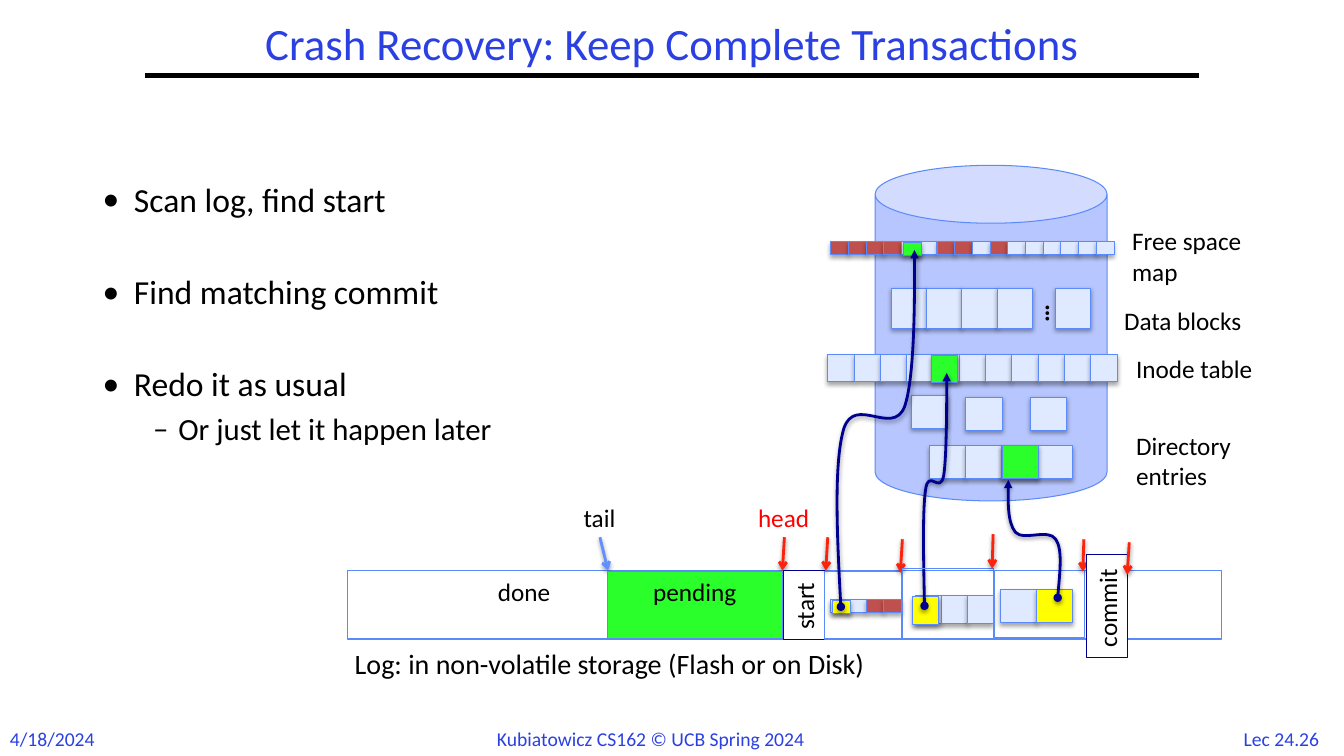
from dataclasses import dataclass
from typing import Any

import pptx
import pptx.dml.color
import pptx.enum.shapes
import pptx.enum.text
import pptx.oxml
import pptx.oxml.ns
import pptx.util
from lxml import etree

RGB = pptx.dml.color.RGBColor
SHAPES = pptx.enum.shapes.MSO_SHAPE
ALIGN = pptx.enum.text.PP_ALIGN
Pt = pptx.util.Pt
qn = pptx.oxml.ns.qn

SCALE = 9144  # EMU in one px, 100 px to the inch
BLACK = RGB(0x00, 0x00, 0x00)
WHITE = RGB(0xFF, 0xFF, 0xFF)
HEADING = RGB(0x2A, 0x40, 0xE2)
RED = RGB(0xFF, 0x00, 0x00)
ARROW_RED = RGB(0xFC, 0x23, 0x0C)
ARROW_BLUE = RGB(0x61, 0x8F, 0xFD)
NAVY = RGB(0x00, 0x00, 0x90)
OUTLINE = RGB(0x5B, 0x8A, 0xFB)
DISK = RGB(0xB7, 0xC6, 0xFE)
FREE = RGB(0xDF, 0xE9, 0xFF)
USED = RGB(0xC0, 0x50, 0x4D)
GREEN = RGB(0x2B, 0xFF, 0x2B)
YELLOW = RGB(0xFF, 0xFF, 0x00)


def px(*lengths):
    return [pptx.util.Emu(round(length * SCALE)) for length in lengths]


def add_shadow(shape, alpha, distance):
    properties = shape._element.spPr
    effects = properties.find(qn("a:effectLst"))
    if effects is None:
        effects = etree.SubElement(properties, qn("a:effectLst"))
    shadow = etree.SubElement(effects, qn("a:outerShdw"), blurRad="40000", dist=str(distance),
                              dir="5400000", rotWithShape="0")
    colour = etree.SubElement(shadow, qn("a:srgbClr"), val="000000")
    etree.SubElement(colour, qn("a:alpha"), val=str(alpha * 1000))


def style_line(shape, colour, width, **ends):
    shape.line.color.rgb = colour
    shape.line.width = Pt(width)
    for end in ("headEnd", "tailEnd"):
        if end in ends:
            etree.SubElement(shape.line._get_or_add_ln(), qn(f"a:{end}"), type=ends[end])


def add_span(para, words, size, colour, bold=False):
    span = para.add_run()
    span.text = words
    span.font.name = "Calibri"
    span.font.size = Pt(size)
    span.font.color.rgb = colour
    span.font.bold = bold


@dataclass
class Region:
    """Draws parts at px offsets from its top left corner."""
    page: Any
    left: int
    top: int
    width: int
    height: int

    def place(self, x, y, width, height):
        return px(self.left + x, self.top + y, width, height)

    def shape(self, kind, box, fill=None):
        shape = self.page.shapes.add_shape(kind, *self.place(*box))
        shape.shadow.inherit = False
        if fill is None:
            shape.fill.background()
        else:
            shape.fill.solid()
            shape.fill.fore_color.rgb = fill
        style_line(shape, OUTLINE, 0.75)
        return shape

    def row(self, x, y, width, height, colours):
        step = width / len(colours)
        for index, colour in enumerate(colours):
            cell = self.shape(SHAPES.RECTANGLE, (x + index * step, y, step, height), colour)
            add_shadow(cell, 35, 23000)

    def label(self, box, *lines, size=18, colour=BLACK, bold=False, wrap=False, align=ALIGN.LEFT):
        label = self.page.shapes.add_textbox(*self.place(*box))
        frame = label.text_frame
        frame.word_wrap = wrap
        frame.auto_size = pptx.enum.text.MSO_AUTO_SIZE.SHAPE_TO_FIT_TEXT
        for index, words in enumerate(lines):
            para = frame.add_paragraph() if index else frame.paragraphs[0]
            para.alignment = align
            add_span(para, words, size, colour, bold)
        return label

    def marker(self, box, words):
        marker = self.label(box, words)
        marker.rotation = 270
        marker.fill.solid()
        marker.fill.fore_color.rgb = WHITE
        style_line(marker, NAVY, 0.75)

    def arrow(self, x1, y1, x2, y2, colour=ARROW_RED):
        arrow = self.page.shapes.add_connector(
            pptx.enum.shapes.MSO_CONNECTOR.STRAIGHT, *self.place(x1, y1, 0, 0)[:2],
            *self.place(x2, y2, 0, 0)[:2])
        style_line(arrow, colour, 2, tailEnd="arrow")
        add_shadow(arrow, 38, 20000)

    def curve(self, start, *points):
        """Start point, then two control points and an end for each Bézier piece."""
        spots = [(self.left + x, self.top + y) for x, y in (start, *points)]
        builder = self.page.shapes.build_freeform(*spots[0], scale=SCALE)
        builder.add_line_segments(spots[1:], close=False)
        curve = builder.convert_to_shape()
        steps = list(curve._element.iter(qn("a:lnTo")))
        for first in range(0, len(steps), 3):
            bend = etree.Element(qn("a:cubicBezTo"))
            steps[first].addprevious(bend)
            for step in steps[first:first + 3]:
                bend.append(step[0])
                step.getparent().remove(step)
        curve.shadow.inherit = False
        curve.fill.background()
        style_line(curve, NAVY, 2, headEnd="oval", tailEnd="triangle")
        add_shadow(curve, 38, 20000)


def draw_heading(page, box):
    area = Region(page, *box)
    title = page.shapes.add_textbox(*area.place(0, 0, area.width, area.height))
    frame = title.text_frame
    frame.word_wrap = True
    frame.vertical_anchor = pptx.enum.text.MSO_ANCHOR.MIDDLE
    para = frame.paragraphs[0]
    para.alignment = ALIGN.CENTER
    para.line_spacing = 0.9
    add_span(para, "Crash Recovery: Keep Complete Transactions", 32, HEADING)
    left, bottom, width, _ = area.place(0, area.height, area.width, 0)
    rule = page.shapes.add_connector(
        pptx.enum.shapes.MSO_CONNECTOR.STRAIGHT, left, bottom, left + width, bottom)
    style_line(rule, BLACK, 3)
    etree.SubElement(rule._element.spPr, qn("a:effectLst"))


def draw_footer(page, box):
    area = Region(page, *box)
    area.label((0, 0, 107, 34), "4/18/2024", size=14, colour=HEADING)
    area.label((483, 0, 368, 34), "Kubiatowicz CS162 © UCB Spring 2024", size=14, colour=HEADING)
    area.label((1217, 0, 108, 34), "Lec 24.26", size=14, colour=HEADING, align=ALIGN.CENTER)


def draw_bullets(page, box):
    frame = page.shapes.add_textbox(*px(*box)).text_frame
    frame.word_wrap = True
    # words, size, space before, bullet, text indent, hanging indent
    items = [("Scan log, find start", 24, 0, "•", 31, 31),
             ("Find matching commit", 24, 40, "•", 31, 31),
             ("Redo it as usual", 24, 40, "•", 31, 31),
             ("Or just let it happen later", 22, 7, "–", 75, 25)]
    for index, (words, size, before, bullet, indent, hanging) in enumerate(items):
        para = frame.add_paragraph() if index else frame.paragraphs[0]
        para.line_spacing = 0.9
        para.space_before = Pt(before)
        properties = para._p.get_or_add_pPr()
        properties.set("marL", str(indent * SCALE))
        properties.set("indent", str(-hanging * SCALE))
        etree.SubElement(properties, qn("a:buFont"), typeface="Calibri")
        etree.SubElement(properties, qn("a:buChar"), char=bullet)
        add_span(para, words, size, BLACK)


def draw_disk(page, box):
    disk = Region(page, *box)
    disk.shape(SHAPES.CAN, (0, 0, disk.width, disk.height), DISK)
    disk.label((237, 134, 152, 40), "Data blocks")
    disk.label((245, 55, 141, 101), "Free space map", wrap=True)
    disk.label((249, 182, 145, 40), "Inode table")
    disk.label((249, 258, 121, 71), "Directory", "entries")
    # Data blocks
    disk.row(16, 122, 140, 40, [FREE] * 4)
    disk.row(179, 122, 35, 40, [FREE])
    disk.label((140, 123, 45, 40), "…", bold=True).rotation = 270
    # Free space map, inode table and directory entries
    disk.row(-44, 76, 281, 13, [USED if mark == "x" else FREE for mark in "xxxx--xx-x------"])
    disk.row(-47, 188, 287, 27, [FREE] * 11)
    disk.row(54, 278, 142, 33, [FREE] * 4)
    for x, y in ((154, 230), (36, 228), (90, 230)):
        disk.row(x, y, 36, 33, [FREE])
    # Cells rewritten from the log
    for cell in ((28, 77, 18, 13), (56, 189, 26, 27), (126, 278, 36, 33)):
        disk.row(*cell, [GREEN])


def draw_log(page, box):
    log = Region(page, *box)
    log.shape(SHAPES.RECTANGLE, (0, 0, log.width, log.height))
    log.label((-3, 70, 586, 44), "Log: in non-volatile storage (Flash or on Disk)", size=20)
    log.label((397, -73, 76, 40), "head", colour=RED)
    log.arrow(433, -33, 431, 0)
    log.label((224, -73, 52, 40), "tail")
    log.arrow(250, -33, 258, 0, ARROW_BLUE)
    log.shape(SHAPES.RECTANGLE, (258, 1, 173, 67), GREEN)
    log.label((293, 1, 110, 40), "pending")
    log.label((139, 1, 76, 40), "done")
    log.marker((418, 14, 69, 40), "start")
    log.arrow(476, -33, 474, 0)
    # Free space map entry
    log.row(479, 29, 70, 13, [FREE, FREE, USED, USED])
    log.row(481, 30, 18, 13, [YELLOW])
    log.shape(SHAPES.RECTANGLE, (473, 1, 76, 67))
    log.curve((489, 36), (485, -36), (482, -108), (492, -141), (503, -174), (540, -133),
              (552, -162), (563, -192), (562, -308), (562, -318))
    log.arrow(550, -31, 548, 2)
    # Inode entry
    log.row(563, 25, 77, 28, [FREE] * 3)
    log.row(560, 26, 26, 28, [YELLOW])
    log.curve((572, 35), (571, -12), (570, -59), (573, -80), (576, -102), (587, -75),
              (591, -94), (594, -113), (594, -186), (594, -196))
    log.shape(SHAPES.RECTANGLE, (550, -2, 90, 70))
    log.arrow(640, -36, 639, -2)
    # Directory entry
    log.row(647, 19, 72, 33, [FREE, YELLOW])
    log.shape(SHAPES.RECTANGLE, (641, 0, 90, 67))
    log.curve((704, 27), (706, 3), (709, -21), (702, -31), (695, -42), (670, -29),
              (662, -38), (654, -48), (655, -80), (655, -90))
    log.arrow(730, -31, 729, 1)
    log.marker((702, 15, 102, 40), "commit")
    log.arrow(775, -28, 773, 4)


def main():
    deck = pptx.Presentation()
    deck.slide_width, deck.slide_height = px(1333, 750)
    page = deck.slides.add_slide(deck.slide_layouts[6])
    draw_footer(page, (0, 716, 1333, 34))
    draw_bullets(page, (92, 177, 749, 333))
    draw_disk(page, (868, 164, 230, 333))
    draw_log(page, (345, 566, 867, 68))
    draw_heading(page, (144, 17, 1045, 58))
    deck.save("out.pptx")


if __name__ == "__main__":
    main()
